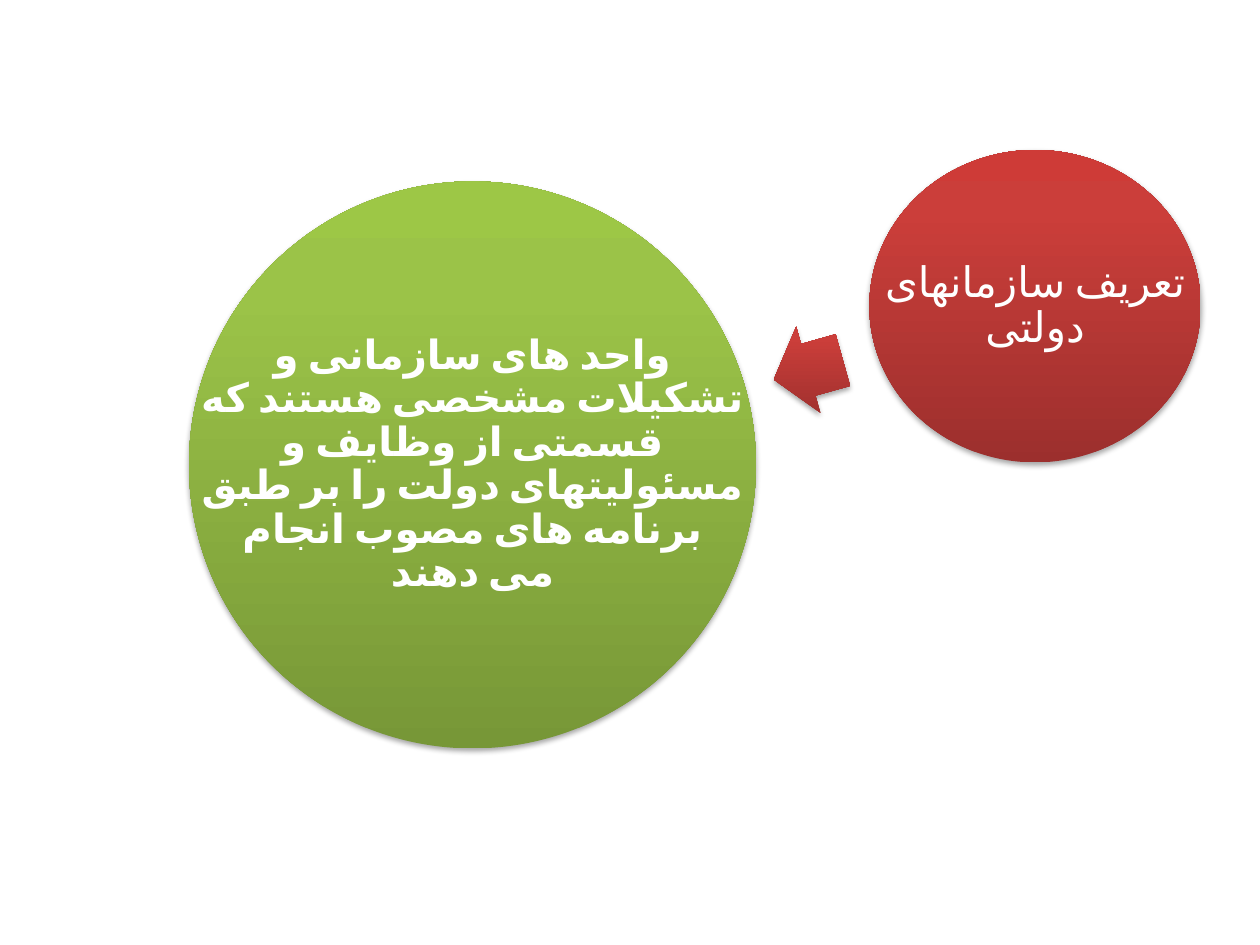
from dataclasses import dataclass

from lxml import etree
from pptx import Presentation
from pptx.dml.color import RGBColor
from pptx.enum import shapes, text
from pptx.oxml import ns
from pptx.util import Inches, Pt


@dataclass(frozen=True)
class Theme:
    font: str = "Calibri"
    language: str = "fa-IR"
    ink: str = "FFFFFF"
    shadow: str = "000000"
    red: tuple = ("9C2F2D", "CB3E3A", "CE3B37")
    green: tuple = ("779737", "9BC348", "9DC746")
    stops: tuple = (0, 80, 100)
    term_size: int = 24
    definition_size: int = 23


THEME = Theme()


def style_shape(shape, colors):
    """Give a shape an upward gradient, no outline and a soft shadow below."""
    shape.line.fill.background()
    shape.fill.background()
    properties = shape.fill._xPr
    stops = "".join(
        f'<a:gs pos="{stop * 1000}"><a:srgbClr val="{color}"/></a:gs>'
        for stop, color in zip(THEME.stops, colors)
    )
    gradient = etree.fromstring(
        f'<a:gradFill {ns.nsdecls("a")} rotWithShape="0"><a:gsLst>{stops}</a:gsLst>'
        '<a:lin ang="16200000" scaled="0"/></a:gradFill>'
    )
    properties.replace(properties.find(ns.qn("a:noFill")), gradient)
    properties.append(etree.fromstring(
        f'<a:effectLst {ns.nsdecls("a")}>'
        f'<a:outerShdw blurRad="{Pt(3.1)}" dist="{Pt(1.8)}" dir="5400000" rotWithShape="0">'
        f'<a:srgbClr val="{THEME.shadow}"><a:alpha val="35000"/></a:srgbClr>'
        '</a:outerShdw></a:effectLst>'
    ))


def add_persian_run(paragraph, line, size, bold):
    """Add a run whose font also covers complex scripts."""
    run = paragraph.add_run()
    run.text = line
    run.font.name = THEME.font
    run.font.size = Pt(size)
    run.font.bold = bold
    run.font.color.rgb = RGBColor.from_string(THEME.ink)
    properties = run._r.get_or_add_rPr()
    properties.set("lang", THEME.language)
    etree.SubElement(properties, ns.qn("a:cs")).set("typeface", THEME.font)


def add_circle(slide, box, colors, lines, size, bold=False):
    """Draw a circle with right-to-left text across its full width."""
    area = [Inches(length) for length in box]
    circle = slide.shapes.add_shape(shapes.MSO_SHAPE.OVAL, *area)
    style_shape(circle, colors)

    frame = slide.shapes.add_textbox(*area).text_frame
    frame.word_wrap = True
    frame.vertical_anchor = text.MSO_ANCHOR.MIDDLE
    frame.margin_left = frame.margin_right = Inches(0.03)
    frame.margin_top = frame.margin_bottom = Inches(0.03)

    paragraph = frame.paragraphs[0]
    paragraph.alignment = text.PP_ALIGN.CENTER
    paragraph.line_spacing = 0.9
    paragraph._p.get_or_add_pPr().set("rtl", "1")
    for number, line in enumerate(lines):
        if number:
            paragraph.add_line_break()
        add_persian_run(paragraph, line, size, bold)


def add_arrow(slide, box, colors, rotation):
    arrow = slide.shapes.add_shape(
        shapes.MSO_SHAPE.RIGHT_ARROW, *[Inches(length) for length in box]
    )
    arrow.adjustments[0] = 0.6
    arrow.adjustments[1] = 0.5
    arrow.rotation = rotation
    style_shape(arrow, colors)


def main():
    presentation = Presentation()
    presentation.slide_width = Inches(10)
    presentation.slide_height = Inches(7.5)
    slide = presentation.slides.add_slide(presentation.slide_layouts[6])

    add_circle(slide, (6.9, 1.19, 2.63, 2.48), THEME.red,
               ["تعریف سازمانهای دولتی"], THEME.term_size)
    add_arrow(slide, (6.13, 2.58, 0.57, 0.71), THEME.red, 164.3)
    add_circle(slide, (1.5, 1.44, 4.5, 4.5), THEME.green,
               ["واحد های سازمانی و تشکیلات مشخصی هستند که قسمتی از وظایف و "
                "مسئولیتهای دولت را بر طبق برنامه های مصوب انجام",
                "می دهند"],
               THEME.definition_size, bold=True)
    presentation.save("out.pptx")


if __name__ == "__main__":
    main()
